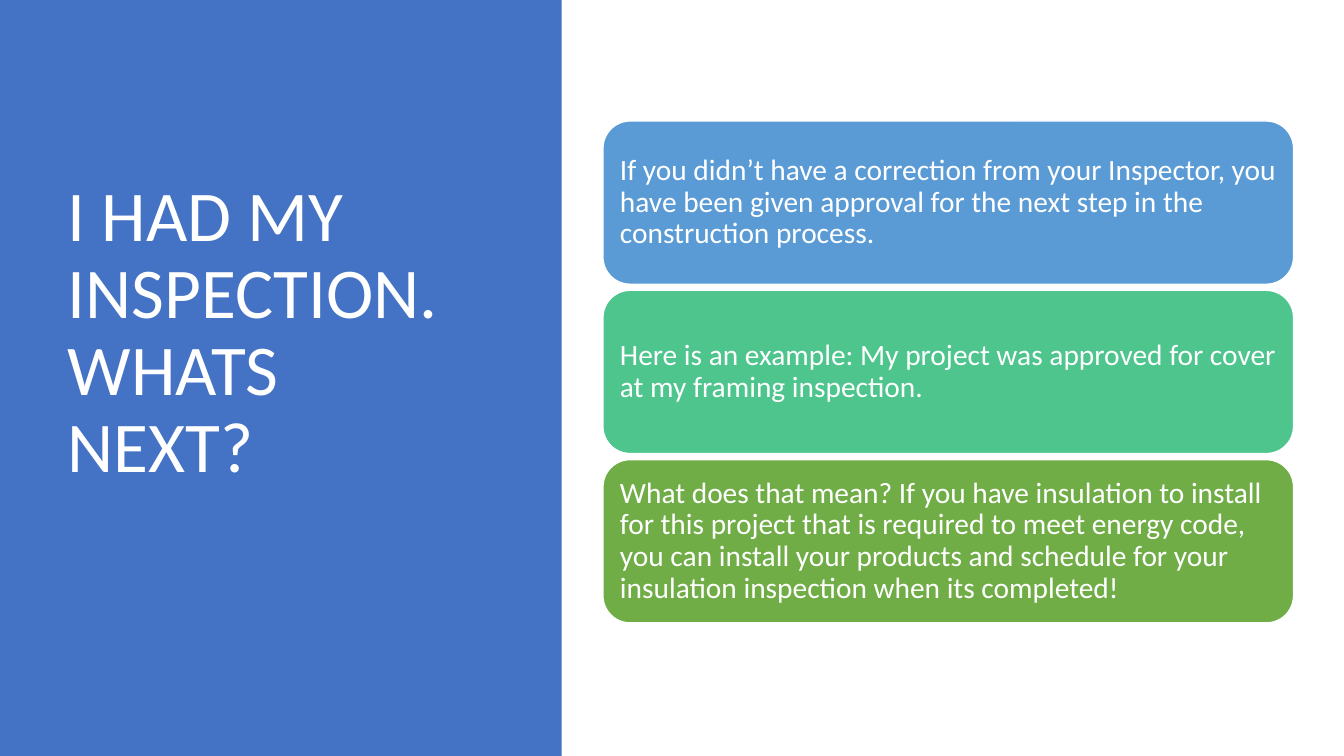
import pptx
import pptx.util
import pptx.dml.color
import pptx.enum.shapes
import pptx.enum.text

Inches = pptx.util.Inches
Pt = pptx.util.Pt
MSO = pptx.enum.shapes.MSO_SHAPE


def color(code):
    return pptx.dml.color.RGBColor.from_string(code)


def write(frame, text, size):
    frame.word_wrap = True
    frame.auto_size = pptx.enum.text.MSO_AUTO_SIZE.NONE
    frame.vertical_anchor = pptx.enum.text.MSO_ANCHOR.MIDDLE
    para = frame.paragraphs[0]
    para.alignment = pptx.enum.text.PP_ALIGN.LEFT
    para.line_spacing = 0.9
    run = para.add_run()
    run.text = text
    run.font.name = "Calibri"
    run.font.size = Pt(size)
    run.font.color.rgb = color("FFFFFF")


deck = pptx.Presentation()
deck.slide_width = Inches(13.33)
deck.slide_height = Inches(7.5)
slide = deck.slides.add_slide(deck.slide_layouts[5])

title = slide.shapes.title
title.left, title.top = Inches(0.57), Inches(0.68)
title.width, title.height = Inches(4.16), Inches(6.02)
title.text_frame.margin_bottom = Inches(0.81)
write(title.text_frame, "I HAD MY INSPECTION. WHATS NEXT?", 51)

panel = slide.shapes.add_shape(MSO.RECTANGLE, 0, 0, Inches(5.57), Inches(7.5))
panel.shadow.inherit = False
panel.fill.solid()
panel.fill.fore_color.rgb = color("4472C4")
panel.line.fill.background()
title.element.addprevious(panel.element)

cards = [
    ("5B9BD5", "If you didn’t have a correction from your Inspector, you have been "
               "given approval for the next step in the construction process."),
    ("4DC58D", "Here is an example: My project was approved for cover at my "
               "framing inspection."),
    ("70AD47", "What does that mean? If you have insulation to install for this "
               "project that is required to meet energy code, you can install your "
               "products and schedule for your insulation inspection when its completed!"),
]
for row, (fill, text) in enumerate(cards):
    card = slide.shapes.add_shape(MSO.ROUNDED_RECTANGLE, Inches(5.98),
                                  Inches(1.2 + 1.68 * row), Inches(6.85), Inches(1.62))
    card.shadow.inherit = False
    card.fill.solid()
    card.fill.fore_color.rgb = color(fill)
    card.line.color.rgb = color("FFFFFF")
    card.line.width = Pt(1)
    frame = card.text_frame
    frame.margin_left = frame.margin_right = Inches(0.09)
    frame.margin_top = frame.margin_bottom = Inches(0.09)
    write(frame, text, 21)

deck.save("out.pptx")
